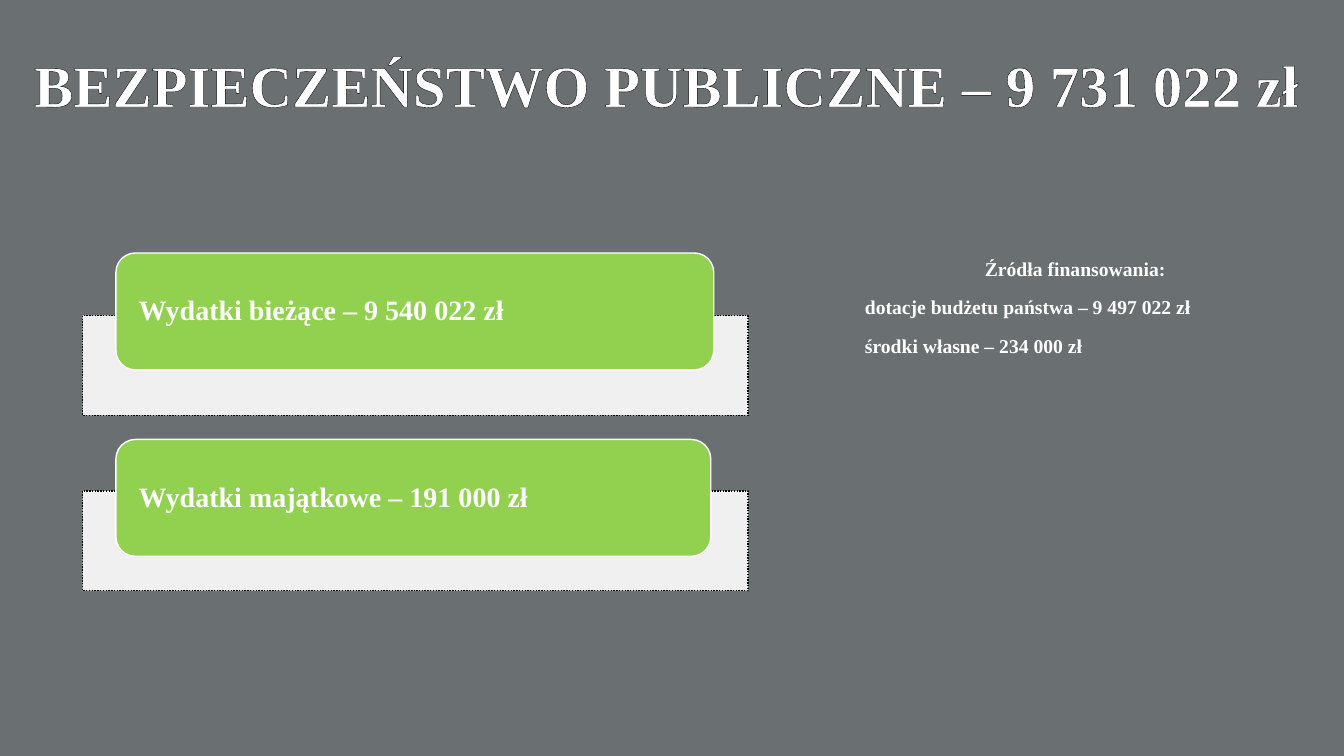
from pptx import Presentation
from pptx.dml.color import RGBColor
from pptx.enum.dml import MSO_LINE
from pptx.enum.shapes import MSO_SHAPE
from pptx.enum.text import MSO_ANCHOR, PP_ALIGN
from pptx.oxml import parse_xml
from pptx.oxml.ns import nsdecls
from pptx.util import Inches, Pt

THEME = {
    "font": "Times New Roman",
    "background": RGBColor(0x6A, 0x6F, 0x71),
    "panel": RGBColor(0xF0, 0xF0, 0xF0),
    "label": RGBColor(0x92, 0xD0, 0x50),
    "white": RGBColor(0xFF, 0xFF, 0xFF),
    "black": RGBColor(0, 0, 0),
    "title_size": 42,
    "label_size": 20,
    "source_size": 14,
}

deck = Presentation()
deck.slide_width, deck.slide_height = Inches(13.33), Inches(7.5)
slide = deck.slides.add_slide(deck.slide_layouts[6])
slide.background.fill.solid()
slide.background.fill.fore_color.rgb = THEME["background"]


def add_text(lines, left, top, width, height, size, aligns, anchor=MSO_ANCHOR.TOP,
             margins=(0.1, 0.05), spacing=1.0, before=0, outlined=False):
    """Add a text box with one paragraph per line."""
    box = slide.shapes.add_textbox(*map(Inches, (left, top, width, height)))
    frame = box.text_frame
    frame.word_wrap = True
    frame.vertical_anchor = anchor
    frame.margin_left = frame.margin_right = Inches(margins[0])
    frame.margin_top = frame.margin_bottom = Inches(margins[1])
    for index, (line, align) in enumerate(zip(lines, aligns)):
        paragraph = frame.add_paragraph() if index else frame.paragraphs[0]
        paragraph.alignment = align
        paragraph.line_spacing = spacing
        paragraph.space_before = Pt(before)
        run = paragraph.add_run()
        run.text = line
        run.font.name, run.font.size, run.font.bold = THEME["font"], Pt(size), True
        run.font.color.rgb = THEME["white"]
        if outlined:
            run.font._element.insert(0, parse_xml(
                f'<a:ln {nsdecls("a")} w="12700"><a:solidFill>'
                f'<a:srgbClr val="{THEME["black"]}"/></a:solidFill></a:ln>'))


def add_block(kind, left, top, width, height, fill, line, dash=None):
    """Add a filled, outlined shape without a shadow."""
    block = slide.shapes.add_shape(kind, *map(Inches, (left, top, width, height)))
    block.shadow.inherit = False
    block.fill.solid()
    block.fill.fore_color.rgb = fill
    block.line.color.rgb = line
    block.line.width = Pt(1)
    if dash:
        block.line.dash_style = dash


# Title
add_text(["BEZPIECZEŃSTWO PUBLICZNE – 9 731 022 zł"], -0.11, 0.36, 13.44, 0.96,
         THEME["title_size"], [PP_ALIGN.CENTER], spacing=1.1, before=10, outlined=True)

# Expenditure rows: a pale panel with a green label over its upper edge
PANEL_LEFT, PANEL_WIDTH, PANEL_HEIGHT = 0.82, 6.6, 0.99
LABEL_LEFT, LABEL_HEIGHT, INSET = 1.15, 1.16, 0.055
expenditures = [
    ("Wydatki bieżące – 9 540 022 zł", 3.13, 2.51, 5.93),
    ("Wydatki majątkowe – 191 000 zł", 4.87, 4.36, 5.9),
]
for expenditure, panel_top, label_top, label_width in expenditures:
    add_block(MSO_SHAPE.RECTANGLE, PANEL_LEFT, panel_top, PANEL_WIDTH, PANEL_HEIGHT,
              THEME["panel"], THEME["black"], MSO_LINE.ROUND_DOT)
    add_block(MSO_SHAPE.ROUNDED_RECTANGLE, LABEL_LEFT, label_top, label_width, LABEL_HEIGHT,
              THEME["label"], THEME["white"])
    add_text([expenditure], LABEL_LEFT + INSET, label_top + INSET,
             label_width - 2 * INSET, LABEL_HEIGHT - 2 * INSET, THEME["label_size"],
             [PP_ALIGN.LEFT], anchor=MSO_ANCHOR.MIDDLE, margins=(0.17, 0), spacing=0.9)

# Sources of funding
sources = ["Źródła finansowania:", "dotacje budżetu państwa – 9 497 022 zł",
           "środki własne – 234 000 zł"]
add_text(sources, 8.48, 2.49, 4.37, 0.96, THEME["source_size"],
         [PP_ALIGN.CENTER, PP_ALIGN.LEFT, PP_ALIGN.LEFT], spacing=1.04, before=10)

deck.save("out.pptx")
